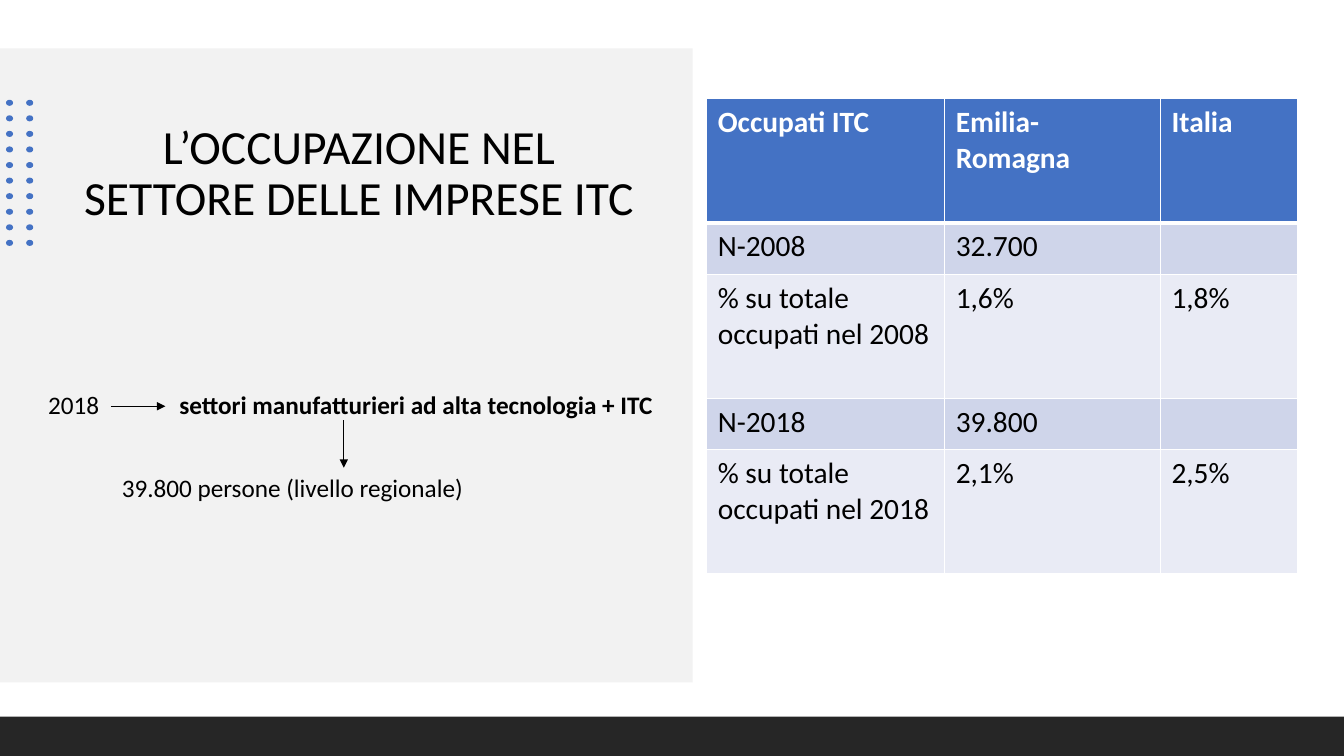
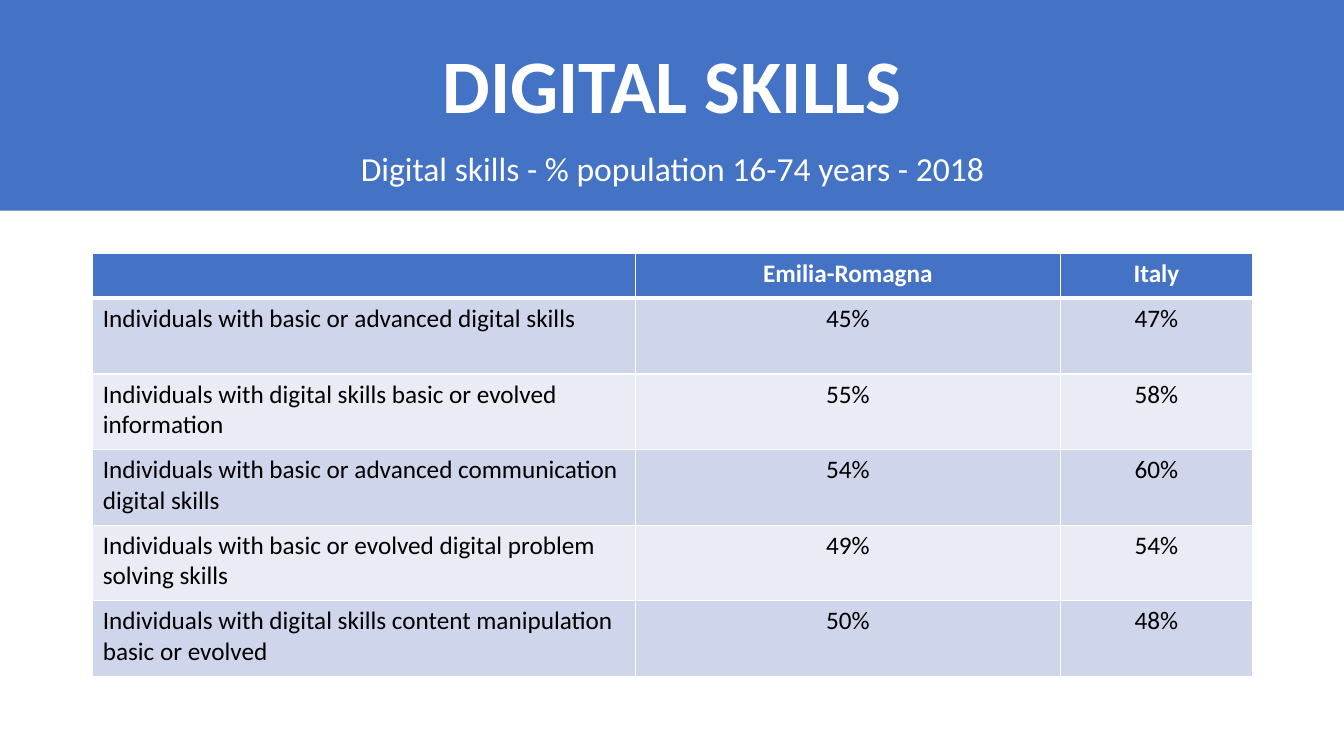
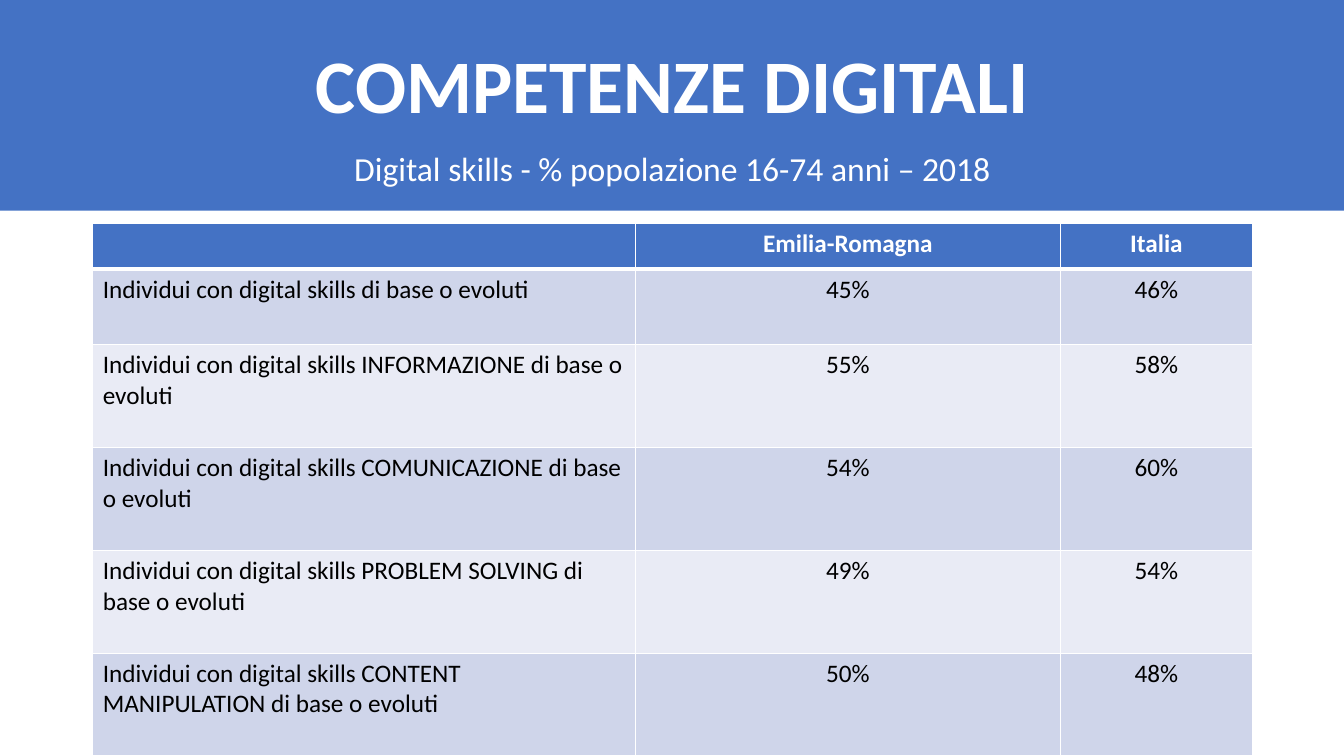
from dataclasses import dataclass

from lxml.etree import SubElement
from pptx import Presentation
from pptx.dml.color import RGBColor
from pptx.enum.shapes import MSO_CONNECTOR, MSO_SHAPE
from pptx.enum.text import MSO_ANCHOR, PP_ALIGN
from pptx.oxml import parse_xml
from pptx.oxml.ns import nsdecls, qn
from pptx.util import Inches, Pt


@dataclass(frozen=True)
class Theme:
    font: str = "Calibri"
    blue: str = "4472C4"
    panel: str = "F2F2F2"
    footer: str = "262626"
    white: str = "FFFFFF"
    black: str = "000000"
    bands: tuple = ("CFD5EA", "E9EBF5")
    banner_title: int = 54
    panel_title: int = 34
    subtitle: int = 24
    large_table: int = 21
    body: int = 18
    line_spacing: float = 0.9
    thin_border: int = 1
    header_border: int = 3
    arrow: float = 0.5


@dataclass(frozen=True)
class Box:
    left: float
    top: float
    width: float
    height: float

    def inner(self, left, top, width, height):
        """Box placed relative to this one."""
        return Box(self.left + left, self.top + top, width, height)

    def emu(self):
        return [Inches(v) for v in (self.left, self.top, self.width, self.height)]


THEME = Theme()
PAGE = Box(0, 0, 13.33, 7.5)


def style_span(span, size, color, bold=False):
    span.font.name = THEME.font
    span.font.size = Pt(size)
    span.font.bold = bold
    span.font.color.rgb = RGBColor.from_string(color)


def add_block(shapes, box, color, preset=MSO_SHAPE.RECTANGLE):
    block = shapes.add_shape(preset, *box.emu())
    block.shadow.inherit = False
    block.fill.solid()
    block.fill.fore_color.rgb = RGBColor.from_string(color)
    block.line.fill.background()


def add_text(page, box, text, size, color=THEME.black, bold=False,
             align=PP_ALIGN.CENTER, anchor=MSO_ANCHOR.MIDDLE):
    frame = page.shapes.add_textbox(*box.emu()).text_frame
    frame.word_wrap = True
    frame.vertical_anchor = anchor
    frame.text = text
    para = frame.paragraphs[0]
    para.alignment = align
    para.line_spacing = THEME.line_spacing
    style_span(para.runs[0], size, color, bold)


def add_arrow(page, box):
    """Arrow from the top left to the bottom right of the box."""
    left, top, width, height = box.emu()
    arrow = page.shapes.add_connector(
        MSO_CONNECTOR.STRAIGHT, left, top, left + width, top + height)
    arrow.line.color.rgb = RGBColor.from_string(THEME.black)
    arrow.line.width = Pt(THEME.arrow)
    properties = arrow._element.spPr
    SubElement(properties.find(qn("a:ln")), qn("a:tailEnd"), type="triangle")
    SubElement(properties, qn("a:effectLst"))


def set_borders(cell, row):
    widths = dict.fromkeys("LRTB", THEME.thin_border)
    if row == 0:
        widths["B"] = THEME.header_border
    elif row == 1:
        widths["T"] = THEME.header_border
    properties = cell._tc.get_or_add_tcPr()
    for index, (side, width) in enumerate(widths.items()):
        properties.insert(index, parse_xml(
            f'<a:ln{side} {nsdecls("a")} w="{Pt(width)}"><a:solidFill>'
            f'<a:srgbClr val="{THEME.white}"/></a:solidFill></a:ln{side}>'))


def style_cell(cell, row, size, align, margins):
    header = row == 0
    color = THEME.blue if header else THEME.bands[(row - 1) % 2]
    cell.fill.solid()
    cell.fill.fore_color.rgb = RGBColor.from_string(color)
    set_borders(cell, row)
    cell.margin_left = cell.margin_right = Inches(margins[0])
    cell.margin_top = cell.margin_bottom = Inches(margins[1])
    para = cell.text_frame.paragraphs[0]
    para.alignment = align
    for span in para.runs:
        style_span(span, size, THEME.white if header else THEME.black, header)


def add_data_table(page, box, rows, widths, heights, size, value_align, margins):
    table = page.shapes.add_table(len(rows), len(widths), *box.emu()).table
    for column, width in zip(table.columns, widths):
        column.width = Inches(width)
    for line, height in zip(table.rows, heights):
        line.height = Inches(height)
    for row, values in enumerate(rows):
        for column, value in enumerate(values):
            cell = table.cell(row, column)
            cell.text = value
            align = value_align if column else PP_ALIGN.LEFT
            style_cell(cell, row, size, align, margins)


def add_dot_grid(page, box, columns=2, rows=10):
    dot_width, dot_height = 0.07, 0.06
    step_x = (box.width - dot_width) / (columns - 1)
    step_y = (box.height - dot_height) / (rows - 1)
    dots = page.shapes.add_group_shape().shapes
    for row in range(rows):
        for column in range(columns):
            dot = box.inner(column * step_x, row * step_y, dot_width, dot_height)
            add_block(dots, dot, THEME.blue, MSO_SHAPE.OVAL)


def add_flow(page, box):
    """Year, sectors and head count, joined by arrows."""
    labels = [
        (0, 0, 0.8, "2018", False),
        (1.3, 0, 5, "settori manufatturieri ad alta tecnologia + ITC", True),
        (0.73, 0.82, 4, "39.800 persone (livello regionale)", False),
    ]
    for left, top, width, text, bold in labels:
        add_text(page, box.inner(left, top, width, 0.4), text, THEME.body,
                 bold=bold, align=PP_ALIGN.LEFT)
    add_arrow(page, box.inner(0.72, 0.2, 0.54, 0))
    add_arrow(page, box.inner(3.03, 0.34, 0, 0.47))


def add_panel(page, box, title):
    add_block(page.shapes, box, THEME.panel)
    add_text(page, box.inner(0.65, 0.5, 5.82, 1.5), title, THEME.panel_title)
    add_dot_grid(page, box.inner(0.06, 0.51, 0.27, 1.45))
    add_flow(page, box.inner(0.38, 3.35, 6.4, 1.22))


def add_banner(page, box, title, subtitle):
    add_block(page.shapes, box, THEME.blue)
    add_text(page, box.inner(0.92, 0.32, 11.5, 1.02), title, THEME.banner_title,
             THEME.white, bold=True, anchor=MSO_ANCHOR.BOTTOM)
    add_text(page, box.inner(0.92, 1.46, 11.5, 0.46), subtitle, THEME.subtitle,
             THEME.white, anchor=MSO_ANCHOR.TOP)


def new_page(deck):
    return deck.slides.add_slide(deck.slide_layouts[6])


def build_employment(deck):
    page = new_page(deck)
    add_panel(page, PAGE.inner(0, 0.48, 6.87, 6.29),
              "L’OCCUPAZIONE NEL SETTORE DELLE IMPRESE ITC")
    add_block(page.shapes, PAGE.inner(0, 7.11, PAGE.width, 0.39), THEME.footer)
    rows = [
        ("Occupati ITC", "Emilia-Romagna", "Italia"),
        ("N-2008", "32.700", ""),
        ("% su totale occupati nel 2008", "1,6%", "1,8%"),
        ("N-2018", "39.800", ""),
        ("% su totale occupati nel 2018", "2,1%", "2,5%"),
    ]
    add_data_table(page, PAGE.inner(7.01, 0.98, 5.86, 4.71), rows,
                   widths=(2.36, 2.14, 1.36),
                   heights=(1.23, 0.51, 1.23, 0.51, 1.23),
                   size=THEME.large_table, value_align=PP_ALIGN.LEFT,
                   margins=(0.11, 0.06))


def build_skills(deck, title, subtitle, rows, table_top, heights):
    page = new_page(deck)
    add_banner(page, PAGE.inner(0, 0, PAGE.width, 2.09), title, subtitle)
    add_data_table(page, PAGE.inner(0.92, table_top, 11.5, sum(heights)), rows,
                   widths=(5.38, 4.22, 1.9), heights=heights, size=THEME.body,
                   value_align=PP_ALIGN.CENTER, margins=(0.1, 0.05))


def main():
    deck = Presentation()
    deck.slide_width, deck.slide_height = Inches(PAGE.width), Inches(PAGE.height)
    build_employment(deck)
    build_skills(
        deck, "DIGITAL SKILLS", "Digital skills - % population 16-74 years - 2018",
        [
            ("", "Emilia-Romagna", "Italy"),
            ("Individuals with basic or advanced digital skills", "45%", "47%"),
            ("Individuals with digital skills basic or evolved information",
             "55%", "58%"),
            ("Individuals with basic or advanced communication digital skills",
             "54%", "60%"),
            ("Individuals with basic or evolved digital problem solving skills",
             "49%", "54%"),
            ("Individuals with digital skills content manipulation basic or evolved",
             "50%", "48%"),
        ],
        table_top=2.51, heights=[0.45] + [0.75] * 5)
    build_skills(
        deck, "COMPETENZE DIGITALI", "Digital skills - % popolazione 16-74 anni – 2018",
        [
            ("", "Emilia-Romagna", "Italia"),
            ("Individui con digital skills di base o evoluti", "45%", "46%"),
            ("Individui con digital skills INFORMAZIONE di base o evoluti",
             "55%", "58%"),
            ("Individui con digital skills COMUNICAZIONE di base o evoluti",
             "54%", "60%"),
            ("Individui con digital skills PROBLEM SOLVING di base o evoluti",
             "49%", "54%"),
            ("Individui con digital skills CONTENT MANIPULATION di base o evoluti",
             "50%", "48%"),
        ],
        table_top=2.22, heights=[0.45, 0.75] + [1.02] * 4)
    deck.save("out.pptx")


if __name__ == "__main__":
    main()
